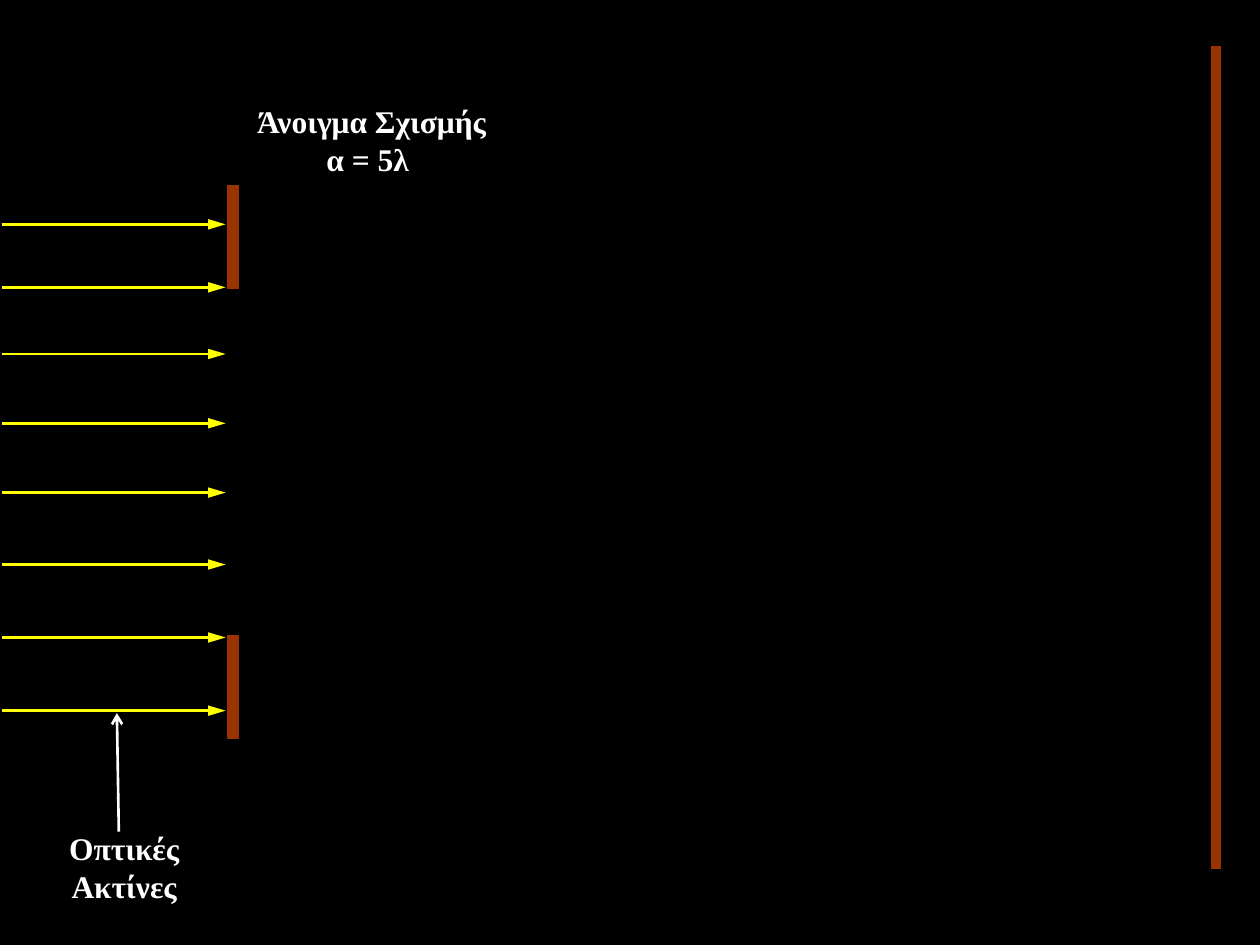
from pptx import Presentation
from pptx.dml.color import RGBColor as Rgb
from pptx.enum.shapes import MSO_CONNECTOR as Conn
from pptx.enum.text import MSO_AUTO_SIZE as Auto, PP_ALIGN as Align
from pptx.oxml.ns import qn
from pptx.util import Pt
from lxml.etree import SubElement as Sub

HUES = {"back": "000000", "ray": "FFFF00", "note": "FFFFFF", "wall": "993300"}
FONT = {"name": "Times New Roman", "size": Pt(18), "bold": True}
BOX = {"word_wrap": True, "auto_size": Auto.SHAPE_TO_FIT_TEXT}
RAYS = [128.2, 164.2, 202.3, 241.9, 281.5, 322.6, 364.3, 406.1]
WALLS = [(133.2, 105.8, 165, 7.25), (133.2, 362.9, 422.4, 7.25),
         (694.8, 26.2, 496.6, 6)]


def hue(name):
    return Rgb.from_string(HUES[name])


def draw(slide, ends, tint, wide=1.5, head=None):
    line = slide.shapes.add_connector(Conn.STRAIGHT, *map(Pt, ends))
    line.line.color.rgb = hue(tint)
    line.line.width = Pt(wide)
    if head:
        tip = Sub(line.line._get_or_add_ln(), qn("a:tailEnd"))
        for key, val in head.items():
            tip.set(key, val)
    Sub(line._element.spPr, qn("a:effectLst"))


def label(slide, spot, rows):
    frame = slide.shapes.add_textbox(*map(Pt, spot)).text_frame
    for key, val in BOX.items():
        setattr(frame, key, val)
    frame.text = "\n".join(rows)
    for para in frame.paragraphs:
        para.alignment = Align.CENTER
        font = para.runs[0].font
        for key, val in FONT.items():
            setattr(font, key, val)
        font.color.rgb = hue("note")


def main():
    deck = Presentation()
    deck.slide_width, deck.slide_height = Pt(720), Pt(540)
    slide = deck.slides.add_slide(deck.slide_layouts[6])
    fill = slide.background.fill
    fill.solid()
    fill.fore_color.rgb = hue("back")

    for y in RAYS:
        draw(slide, (0.9, y, 128.9, y), "ray",
             head={"type": "triangle", "w": "med", "len": "lg"})
    draw(slide, (67.9, 475.2, 66.8, 407.5), "note", head={"type": "arrow"})
    label(slide, (1.5, 470.2, 139, 51), ["Οπτικές Ακτίνες"])
    label(slide, (133.2, 54.8, 158.4, 51), ["Άνοιγμα Σχισμής", "α = 5λ "])
    for x, top, end, wide in WALLS:
        draw(slide, (x, top, x, end), "wall", wide)

    deck.save("out.pptx")


if __name__ == "__main__":
    main()
